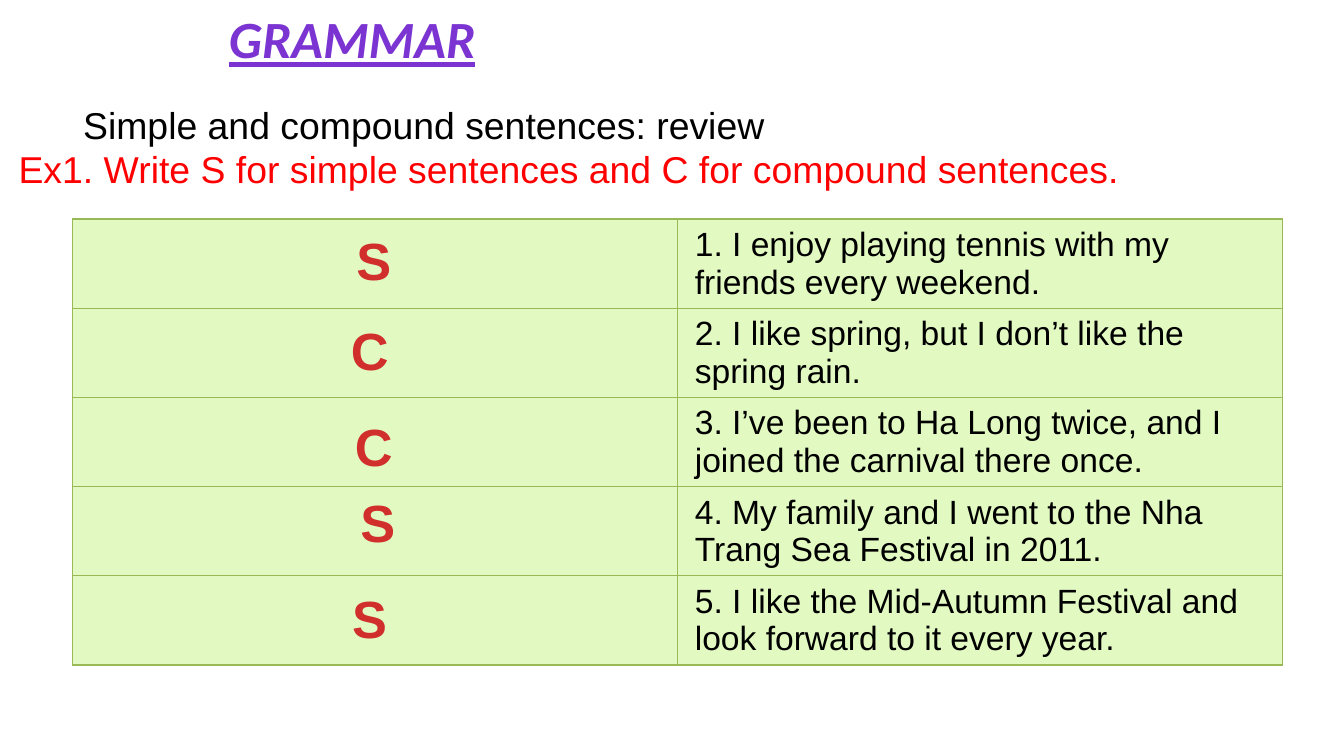
"""Build a grammar slide on simple and compound sentences."""
from lxml import etree
from pptx import Presentation
from pptx.dml.color import RGBColor
from pptx.enum.text import MSO_ANCHOR, MSO_AUTO_SIZE, PP_ALIGN
from pptx.oxml.ns import qn
from pptx.util import Inches, Pt

CENTER = PP_ALIGN.CENTER
LEFT = PP_ALIGN.LEFT
MIDDLE = MSO_ANCHOR.MIDDLE
TOP = MSO_ANCHOR.TOP
NO_AUTOFIT = MSO_AUTO_SIZE.NONE
TITLE_ONLY = 5

COLORS = {
    "title": "7B34D2",
    "text": "000000",
    "task": "FF0000",
    "answer": "D02F2C",
    "cell": "E2FAC2",
    "border": "98B955",
}
SENTENCES = [
    "I enjoy playing tennis with my friends every weekend.",
    "I like spring, but I don’t like the spring rain.",
    "I’ve been to Ha Long twice, and I joined the carnival there once.",
    "My family and I went to the Nha Trang Sea Festival in 2011.",
    "I like the Mid-Autumn Festival and look forward to it every year.",
]
ANSWERS = [
    ("S", 2.54, 1.65),
    ("C", 2.51, 2.32),
    ("C", 2.54, 3.03),
    ("S", 2.57, 3.6),
    ("S", 2.51, 4.31),
]


def format_text(text_frame, size, color, font="Arial", bold=False, align=LEFT):
    paragraph = text_frame.paragraphs[0]
    paragraph.alignment = align
    run_font = paragraph.runs[0].font
    run_font.name = font
    run_font.size = Pt(size)
    run_font.bold = bold
    run_font.color.rgb = RGBColor.from_string(COLORS[color])
    return run_font


def add_title(slide, text):
    title = slide.shapes.title
    title.left, title.top = Inches(0.03), Inches(0)
    title.width, title.height = Inches(5.18), Inches(0.57)
    text_frame = title.text_frame
    text_frame.text = text
    text_frame.auto_size = NO_AUTOFIT
    text_frame.vertical_anchor = TOP
    font = format_text(text_frame, 28, "title", "Calibri", True, CENTER)
    font.italic = True
    font.underline = True


def add_text(slide, text, left, top, width, height, wrap=True, **style):
    shape = slide.shapes.add_textbox(
        Inches(left), Inches(top), Inches(width), Inches(height))
    shape.text_frame.word_wrap = wrap
    shape.text_frame.text = text
    format_text(shape.text_frame, **style)


def style_cell(cell):
    cell.fill.solid()
    cell.fill.fore_color.rgb = RGBColor.from_string(COLORS["cell"])
    cell.vertical_anchor = MIDDLE
    cell.margin_left = cell.margin_right = Inches(0.13)
    cell.margin_top = cell.margin_bottom = Inches(0.03)
    properties = cell._tc.get_or_add_tcPr()
    for index, side in enumerate(("lnL", "lnR", "lnT", "lnB")):
        line = etree.Element(qn(f"a:{side}"), w=str(Pt(0.75)))
        fill = etree.SubElement(line, qn("a:solidFill"))
        etree.SubElement(fill, qn("a:srgbClr"), val=COLORS["border"])
        properties.insert(index, line)


def add_sentence_table(slide):
    table = slide.shapes.add_table(
        len(SENTENCES), 2, Inches(0.54), Inches(1.63), Inches(9), Inches(3.32)).table
    table.first_row = False
    table.horz_banding = False
    for row, sentence in enumerate(SENTENCES):
        for column in range(2):
            style_cell(table.cell(row, column))
        text_frame = table.cell(row, 1).text_frame
        text_frame.text = f"{row + 1}. {sentence}"
        format_text(text_frame, 18, "text")


def main():
    presentation = Presentation()
    presentation.slide_width = Inches(10)
    presentation.slide_height = Inches(10) * 9 // 16
    slide = presentation.slides.add_slide(presentation.slide_layouts[TITLE_ONLY])
    add_title(slide, "GRAMMAR")
    add_text(slide, "Simple and compound sentences: review",
             0.52, 0.71, 9.48, 0.44, size=20, color="text")
    add_text(slide, "Ex1. Write S for simple sentences and C for compound sentences.",
             0.04, 1.04, 9.96, 0.44, size=20, color="task")
    add_sentence_table(slide)
    for letter, left, top in ANSWERS:
        add_text(slide, letter, left, top, 0.48, 0.57, wrap=False,
                 size=28, color="answer", bold=True, align=CENTER)
    presentation.save("out.pptx")


if __name__ == "__main__":
    main()
